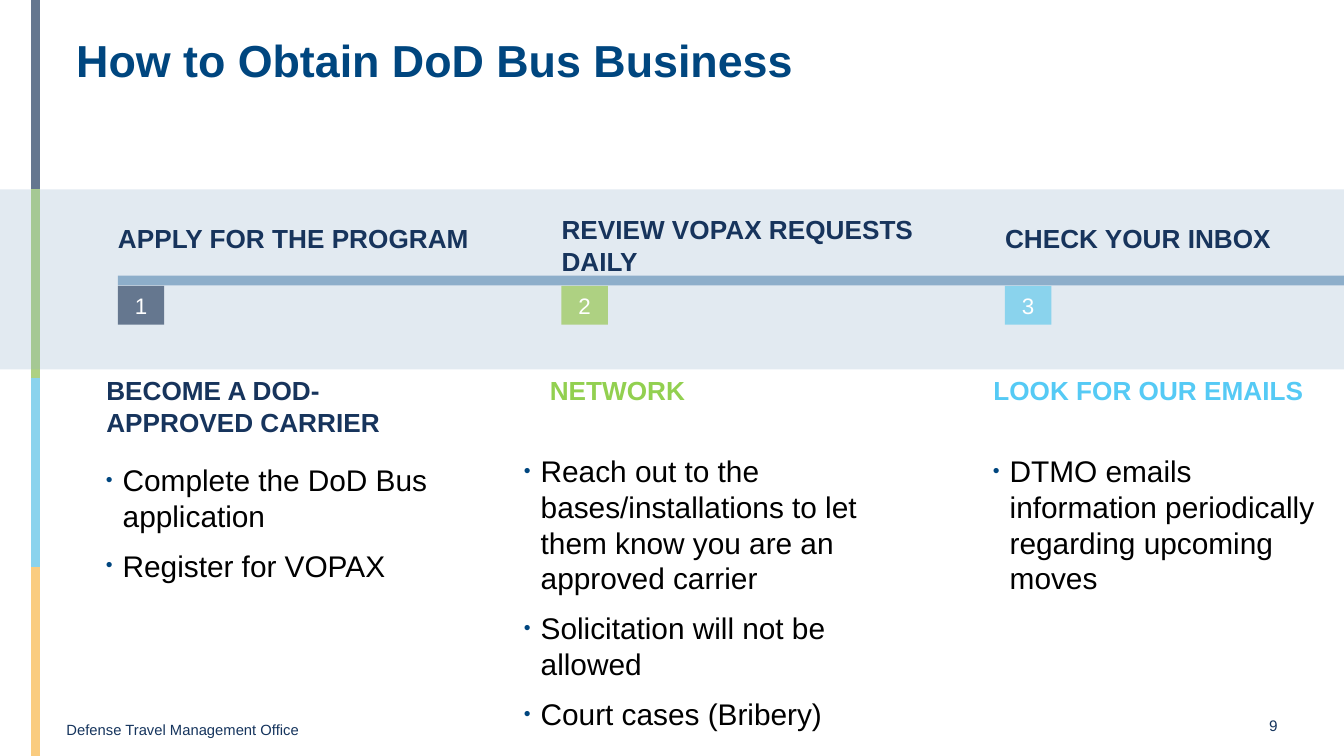
from dataclasses import dataclass

from lxml.etree import SubElement
from pptx import Presentation
from pptx.dml.color import RGBColor
from pptx.enum.shapes import MSO_CONNECTOR, MSO_SHAPE
from pptx.enum.text import MSO_ANCHOR, PP_ALIGN
from pptx.oxml.ns import qn
from pptx.util import Inches, Pt

SLIDE_WIDTH = Inches(10)
SLIDE_HEIGHT = SLIDE_WIDTH * 9 // 16
COLUMN, ROW = SLIDE_WIDTH / 100, SLIDE_HEIGHT / 100


@dataclass(frozen=True)
class Theme:
    font: str = "Arial"
    title_blue: str = "00467F"
    navy: str = "17345C"
    footer_navy: str = "15345D"
    slate: str = "65778F"
    green: str = "AED182"
    sky: str = "8AD3ED"
    amber: str = "FACC80"
    steel: str = "8DAECA"
    lime: str = "92D050"
    bright_sky: str = "55CAF5"
    white: str = "FFFFFF"
    black: str = "000000"
    title_size: float = 24
    body_size: float = 16
    heading_size: float = 14
    number_size: float = 12
    page_size: float = 8.2
    footer_size: float = 7.9
    spine_width: float = 5
    gap: float = 7.5
    indent: float = 9


THEME = Theme()


@dataclass(frozen=True)
class Box:
    left: float
    top: float
    width: float
    height: float

    def inner(self, left, top, width, height):
        return Box(self.left + left, self.top + top, width, height)

    def emu(self):
        return (round(self.left * COLUMN), round(self.top * ROW),
                round(self.width * COLUMN), round(self.height * ROW))


@dataclass(frozen=True)
class Step:
    label: str
    heading: str
    tasks: tuple
    badge_color: str
    heading_color: str
    label_top: float = 4.35
    tasks_left: float = -0.9
    tasks_top: float = 34.83
    tasks_width: float = 25.3


STEPS = (
    Step("APPLY FOR THE PROGRAM", "BECOME A DOD-APPROVED CARRIER",
         ("Complete the DoD Bus application", "Register for VOPAX"),
         THEME.slate, THEME.navy, tasks_top=36.02),
    Step("REVIEW VOPAX REQUESTS DAILY", "NETWORK",
         ("Reach out to the bases/installations to let them know you are an approved carrier",
          "Solicitation will not be allowed", "Court cases (Bribery)"),
         THEME.green, THEME.lime, label_top=3.2, tasks_left=-2.8, tasks_width=29.8),
    Step("CHECK YOUR INBOX", "LOOK FOR OUR EMAILS",
         ("DTMO emails information periodically regarding upcoming moves",),
         THEME.sky, THEME.bright_sky),
)


def rgb(color):
    return RGBColor.from_string(color)


def clear_margins(frame):
    frame.margin_left = frame.margin_top = frame.margin_right = frame.margin_bottom = 0
    frame.word_wrap = True


def write(paragraph, text, size, color, bold=False, align=PP_ALIGN.LEFT):
    paragraph.alignment = align
    run = paragraph.add_run()
    run.text = text
    run.font.name = THEME.font
    run.font.size = Pt(size)
    run.font.bold = bold
    run.font.color.rgb = rgb(color)


def add_text(slide, box, text, size, color, bold=False, align=PP_ALIGN.LEFT):
    frame = slide.shapes.add_textbox(*box.emu()).text_frame
    clear_margins(frame)
    write(frame.paragraphs[0], text, size, color, bold, align)


def add_block(slide, box, color, opacity=100):
    block = slide.shapes.add_shape(MSO_SHAPE.RECTANGLE, *box.emu())
    block.shadow.inherit = False
    block.line.fill.background()
    block.fill.solid()
    block.fill.fore_color.rgb = rgb(color)
    if opacity < 100:
        tint = block.fill._xPr.find(f".//{qn('a:srgbClr')}")
        SubElement(tint, qn("a:alpha"), val=str(opacity * 1000))
    return block


def add_bullet(paragraph):
    properties = paragraph._p.get_or_add_pPr()
    properties.set("marL", str(Pt(THEME.indent)))
    properties.set("indent", str(-Pt(THEME.indent)))
    bullet_color = SubElement(properties, qn("a:buClr"))
    SubElement(bullet_color, qn("a:srgbClr"), val=THEME.title_blue)
    SubElement(properties, qn("a:buSzPct"), val="65000")
    SubElement(properties, qn("a:buFont"), typeface=THEME.font)
    SubElement(properties, qn("a:buChar"), char="•")


def add_spine(slide, box):
    colors = (THEME.slate, THEME.green, THEME.sky, THEME.amber)
    length = box.height / len(colors)
    for index, color in enumerate(colors):
        x, y, _, height = box.inner(0, index * length, 0, length).emu()
        segment = slide.shapes.add_connector(MSO_CONNECTOR.STRAIGHT, x, y, x, y + height)
        segment.line.color.rgb = rgb(color)
        segment.line.width = Pt(THEME.spine_width)
        SubElement(segment._element.spPr, qn("a:effectLst"))


def add_band(slide, box):
    add_block(slide, box, THEME.steel, opacity=25)
    add_block(slide, box.inner(8.78, 11.42, box.width - 8.78, 1.3), THEME.steel)


def add_tasks(slide, box, tasks):
    frame = slide.shapes.add_textbox(*box.emu()).text_frame
    clear_margins(frame)
    for index, task in enumerate(tasks):
        paragraph = frame.add_paragraph() if index else frame.paragraphs[0]
        paragraph.space_before = Pt(THEME.gap)
        write(paragraph, task, THEME.body_size, THEME.black)
        add_bullet(paragraph)


def add_step(slide, box, number, step):
    add_text(slide, box.inner(0, step.label_top, 27.5, 6.05), step.label,
             THEME.heading_size, THEME.navy, bold=True)
    badge = add_block(slide, box.inner(0, 12.75, 3.45, 5.16), step.badge_color)
    clear_margins(badge.text_frame)
    badge.text_frame.vertical_anchor = MSO_ANCHOR.MIDDLE
    write(badge.text_frame.paragraphs[0], str(number), THEME.number_size,
          THEME.white, align=PP_ALIGN.CENTER)
    add_text(slide, box.inner(-0.87, 24.5, 23.2, 6.05), step.heading,
             THEME.heading_size, step.heading_color, bold=True)
    add_tasks(slide, box.inner(step.tasks_left, step.tasks_top, step.tasks_width, 32.9),
              step.tasks)


def add_footer(slide, box):
    add_text(slide, box.inner(0, 0.89, 60, 2.3), "Defense Travel Management Office",
             THEME.footer_size, THEME.footer_navy)
    add_text(slide, box.inner(88.3, 0.18, 3, 3.38), "9",
             THEME.page_size, THEME.footer_navy, align=PP_ALIGN.CENTER)


def main():
    presentation = Presentation()
    presentation.slide_width, presentation.slide_height = SLIDE_WIDTH, SLIDE_HEIGHT
    slide = presentation.slides.add_slide(presentation.slide_layouts[6])
    band = Box(0, 25.05, 100, 23.84)
    add_spine(slide, Box(2.65, 0, 0, 100))
    add_band(slide, band)
    add_text(slide, Box(5.67, 4.35, 91.3, 11.74), "How to Obtain DoD Bus Business",
             THEME.title_size, THEME.title_blue, bold=True)
    for index, step in enumerate(STEPS):
        add_step(slide, band.inner(8.78 + 33 * index, 0, 33, 70), index + 1, step)
    add_footer(slide, Box(4.95, 94.5, 95, 4.09))
    presentation.save("out.pptx")


if __name__ == "__main__":
    main()
